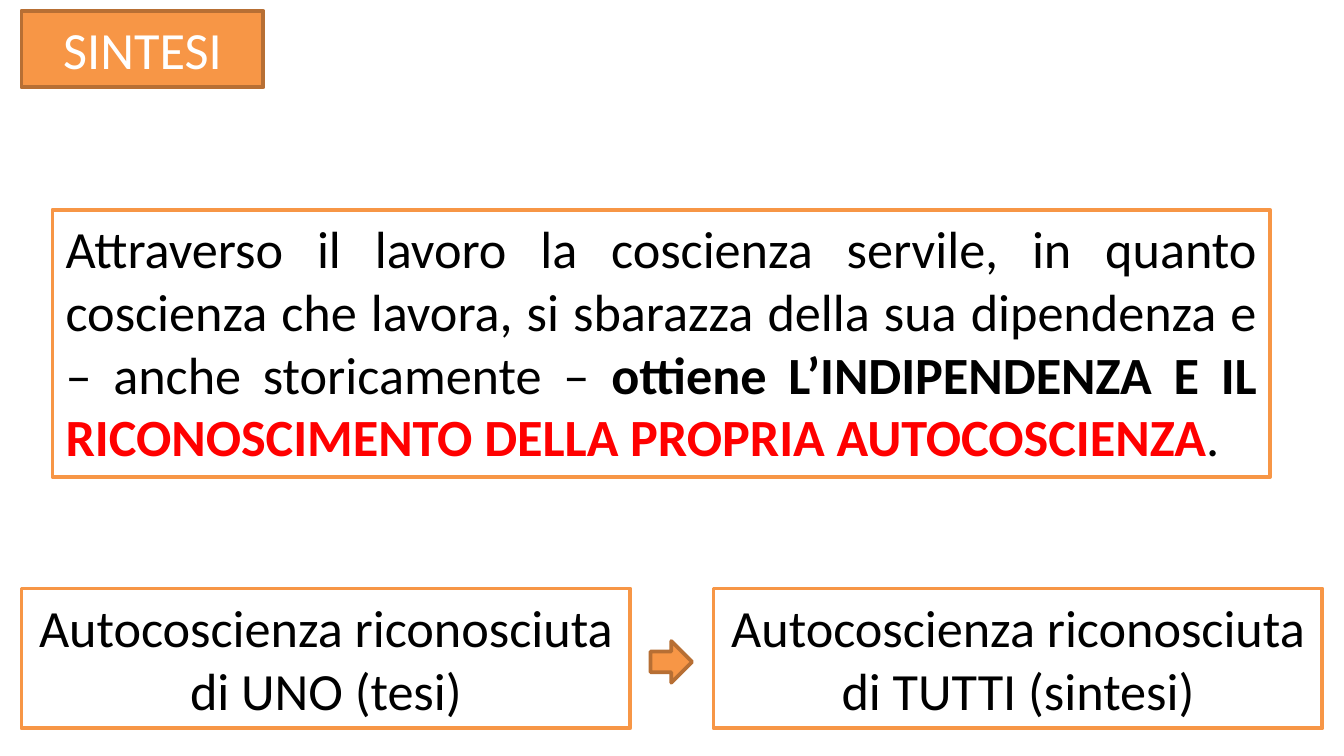
from dataclasses import dataclass

from pptx import Presentation
from pptx.dml.color import RGBColor as Rgb
from pptx.enum.shapes import MSO_SHAPE as Kind
from pptx.enum.text import MSO_ANCHOR as Anchor, MSO_AUTO_SIZE as Fit, PP_ALIGN as Align
from pptx.util import Inches, Pt

COLORS = {
    "white": "FFFFFF",
    "black": "000000",
    "red": "FF0000",
    "orange": "F79646",
    "brown": "B76F34",
}
EDGE = 0.16
WIDTH = 4.53


@dataclass(frozen=True)
class Run:
    text: str
    color: str = "black"
    bold: bool = False


@dataclass(frozen=True)
class Box:
    left: float
    top: float
    width: float
    height: float
    runs: tuple[Run, ...] = ()
    align: Align = Align.CENTER
    fill: str = "white"
    line: str = "orange"
    kind: Kind = Kind.RECTANGLE


def tint(name: str) -> Rgb:
    return Rgb.from_string(COLORS[name])


def style(shape, box: Box) -> None:
    shape.left, shape.top = Inches(box.left), Inches(box.top)
    shape.width, shape.height = Inches(box.width), Inches(box.height)
    shape.fill.solid()
    shape.fill.fore_color.rgb = tint(box.fill)
    shape.line.color.rgb = tint(box.line)
    shape.line.width = Pt(2)


def write(shape, box: Box, fit: Fit) -> None:
    frame = shape.text_frame
    frame.word_wrap = True
    frame.auto_size = fit
    frame.vertical_anchor = Anchor.TOP
    para = frame.paragraphs[0]
    para.alignment = box.align
    para.font.name = "Calibri"
    para.font.size = Pt(28)
    for item in box.runs:
        run = para.add_run()
        run.text = item.text
        run.font.bold = item.bold
        run.font.color.rgb = tint(item.color)


def draw(slide, box: Box) -> None:
    shape = slide.shapes.add_shape(box.kind, 0, 0, 0, 0)
    shape.shadow.inherit = False
    style(shape, box)
    if box.runs:
        write(shape, box, Fit.SHAPE_TO_FIT_TEXT)


TITLE = Box(EDGE, 0.08, 1.8, 0.57, (Run("SINTESI", "white"),),
            fill="orange", line="brown")
BOXES = [
    Box(0.39, 1.56, 9.06, 1.99, (
        Run("Attraverso il lavoro la coscienza servile, in quanto coscienza "
            "che lavora, si sbarazza della sua dipendenza e "
            "– anche storicamente – "),
        Run("ottiene L’INDIPENDENZA E IL ", bold=True),
        Run("RICONOSCIMENTO DELLA PROPRIA AUTOCOSCIENZA", "red", True),
        Run(". "),
    ), Align.JUSTIFY),
    Box(EDGE, 4.38, WIDTH, 1.04,
        (Run("Autocoscienza riconosciuta di UNO (tesi)"),)),
    Box(10 - EDGE - WIDTH, 4.38, WIDTH, 1.04,
        (Run("Autocoscienza riconosciuta di TUTTI (sintesi)"),)),
    Box(4.84, 4.77, 0.31, 0.31, fill="orange", line="brown",
        kind=Kind.RIGHT_ARROW),
]


def main() -> None:
    deck = Presentation()
    deck.slide_width = Inches(10)
    deck.slide_height = deck.slide_width * 9 // 16
    slide = deck.slides.add_slide(deck.slide_layouts[5])
    title = slide.shapes.title
    style(title, TITLE)
    write(title, TITLE, Fit.NONE)
    for box in BOXES:
        draw(slide, box)
    deck.save("out.pptx")


if __name__ == "__main__":
    main()
